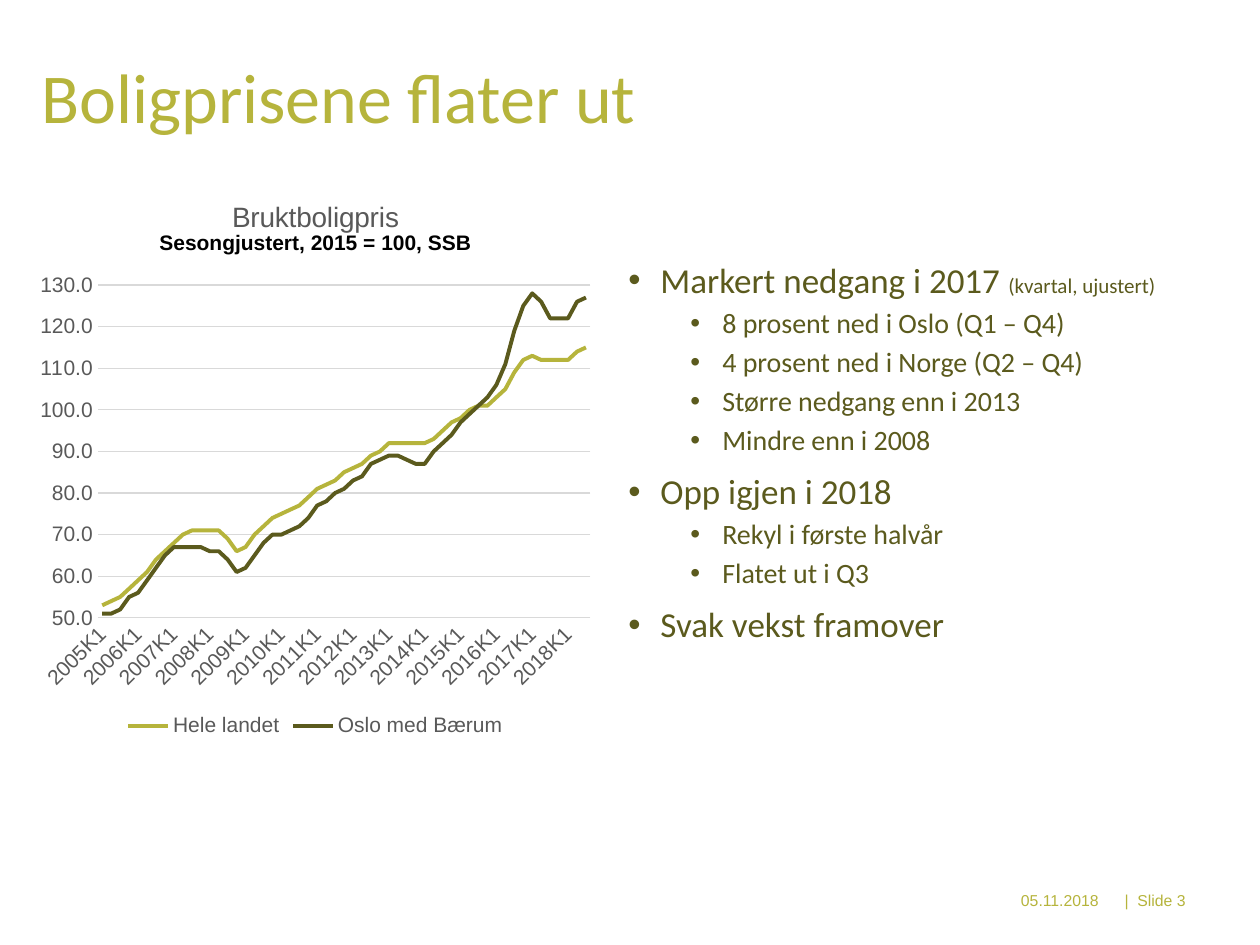
from dataclasses import dataclass

from lxml import etree
from pptx import Presentation
from pptx import util as u
from pptx.chart.data import CategoryChartData
from pptx.dml.color import RGBColor
from pptx.enum import chart as ch
from pptx.enum import text
from pptx.oxml import parse_xml
from pptx.oxml.ns import nsdecls, qn

PX = u.Inches(1) / 126
LIME, OLIVE, GREY, RULE, BLACK = "B6B43C", "5B5A1D", "595959", "D9D9D9", "000000"


@dataclass
class Run:
    text: str
    size: int
    color: str = OLIVE
    font: str = "Calibri"
    bold: bool = False


@dataclass
class Bullet:
    runs: list[Run]
    level: int = 0


@dataclass
class Label:
    run: Run
    box: tuple[int, int, int, int]
    format: dict


@dataclass
class Series:
    name: str
    color: str
    values: list[int]


LABELS = [
    Label(Run("Boligprisene flater ut", 40, LIME), (29, 50, 1218, 102), {"line_spacing": 0.9}),
    Label(Run("05.11.2018", 9, LIME, "Arial"), (965, 885, 146, 31), {"alignment": text.PP_ALIGN.RIGHT}),
    Label(Run("|  Slide 3", 9, LIME, "Arial"), (1084, 885, 114, 31), {"alignment": text.PP_ALIGN.RIGHT}),
]


def point(words: str) -> Bullet:
    return Bullet([Run(words, 20)])


def detail(words: str) -> Bullet:
    return Bullet([Run(words, 16)], 1)


BULLETS = [
    Bullet([Run("Markert nedgang i 2017 ", 20), Run("(kvartal, ujustert)", 12)]),
    detail("8 prosent ned i Oslo (Q1 – Q4)"),
    detail("4 prosent ned i Norge (Q2 – Q4)"),
    detail("Større nedgang enn i 2013"),
    detail("Mindre enn i 2008"),
    point("Opp igjen i 2018"),
    detail("Rekyl i første halvår"),
    detail("Flatet ut i Q3"),
    point("Svak vekst framover"),
]

TITLE = [
    Run("Bruktboligpris", 16, GREY, "Arial"),
    Run("Sesongjustert, 2015 = 100, SSB", 12, BLACK, "Arial", True),
]
SERIES = [
    Series("Hele landet", LIME, [
        53, 54, 55, 57, 59, 61, 64, 66, 68, 70, 71, 71, 71, 71, 69, 66, 67, 70, 72,
        74, 75, 76, 77, 79, 81, 82, 83, 85, 86, 87, 89, 90, 92, 92, 92, 92, 92, 93,
        95, 97, 98, 100, 101, 101, 103, 105, 109, 112, 113, 112, 112, 112, 112, 114, 115]),
    Series("Oslo med Bærum", OLIVE, [
        51, 51, 52, 55, 56, 59, 62, 65, 67, 67, 67, 67, 66, 66, 64, 61, 62, 65, 68,
        70, 70, 71, 72, 74, 77, 78, 80, 81, 83, 84, 87, 88, 89, 89, 88, 87, 87, 90,
        92, 94, 97, 99, 101, 103, 106, 111, 119, 125, 128, 126, 122, 122, 122, 126, 127]),
]
QUARTERS = [f"{2005 + i // 4}K{i % 4 + 1}" for i in range(len(SERIES[0].values))]


def px(n: int) -> u.Emu:
    return u.Emu(round(n * PX))


def rgb(color: str) -> RGBColor:
    return RGBColor.from_string(color)


def set_all(obj, values: dict) -> None:
    for name, value in values.items():
        setattr(obj, name, value)


def set_font(font, size: int, color: str, name: str, bold: bool = False) -> None:
    set_all(font, {"size": u.Pt(size), "name": name, "bold": bold})
    font.color.rgb = rgb(color)


def set_line(line, color: str, width: float) -> None:
    line.color.rgb = rgb(color)
    line.width = u.Pt(width)


def add_run(p, run: Run) -> None:
    r = p.add_run()
    r.text = run.text
    set_font(r.font, run.size, run.color, run.font, run.bold)


def add_box(slide, box: tuple[int, int, int, int], anchor):
    tf = slide.shapes.add_textbox(*map(px, box)).text_frame
    set_all(tf, {"word_wrap": True, "vertical_anchor": anchor})
    return tf


def add_label(slide, label: Label) -> None:
    p = add_box(slide, label.box, text.MSO_ANCHOR.MIDDLE).paragraphs[0]
    set_all(p, label.format)
    add_run(p, label.run)


def add_bullets(slide, bullets: list[Bullet], box: tuple[int, int, int, int]) -> None:
    tf = add_box(slide, box, text.MSO_ANCHOR.TOP)
    for i, bullet in enumerate(bullets):
        p = tf.add_paragraph() if i else tf.paragraphs[0]
        pPr = p._p.get_or_add_pPr()
        pPr.set("marL", str(px(94 if bullet.level else 32)))
        pPr.set("indent", str(px(-32)))
        etree.SubElement(pPr, qn("a:buFont")).set("typeface", "Arial")
        etree.SubElement(pPr, qn("a:buChar")).set("char", "•")
        space = u.Pt(5 if bullet.level else 10) if i else u.Pt(0)
        set_all(p, {"level": bullet.level, "line_spacing": 0.9, "space_before": space})
        for run in bullet.runs:
            add_run(p, run)


def format_axes(chart) -> None:
    cat, val = chart.category_axis, chart.value_axis
    for axis in (cat, val):
        set_all(axis, {"major_tick_mark": ch.XL_TICK_MARK.NONE,
                       "minor_tick_mark": ch.XL_TICK_MARK.NONE})
        set_font(axis.tick_labels.font, 12, GREY, "Arial")
    set_line(cat.format.line, RULE, 0.75)
    cat._element.txPr.find(qn("a:bodyPr")).set("rot", str(-45 * 60000))
    skip = parse_xml(f'<c:tickLblSkip {nsdecls("c")} val="4"/>')
    cat._element.find(qn("c:noMultiLvlLbl")).addprevious(skip)
    set_all(val, {"minimum_scale": 50, "maximum_scale": 130, "major_unit": 10,
                  "has_major_gridlines": True})
    set_all(val.tick_labels, {"number_format": "0.0", "number_format_is_linked": False})
    val.format.line.fill.background()
    set_line(val.major_gridlines.format.line, RULE, 0.75)


def place_plot(chart, **fractions: float) -> None:
    """Fix the inner plot area as fractions of the chart."""
    area = chart._chartSpace.chart.plotArea
    for old in area.findall(qn("c:layout")):
        area.remove(old)
    sizes = "".join(f'<c:{name} val="{value}"/>' for name, value in fractions.items())
    area.insert(0, parse_xml(
        f'<c:layout {nsdecls("c")}><c:manualLayout><c:layoutTarget val="inner"/>'
        f'<c:xMode val="edge"/><c:yMode val="edge"/>{sizes}</c:manualLayout></c:layout>'))


def add_price_chart(slide, box: tuple[int, int, int, int]) -> None:
    data = CategoryChartData(number_format="0.0")
    data.categories = QUARTERS
    for series in SERIES:
        data.add_series(series.name, series.values)
    chart = slide.shapes.add_chart(ch.XL_CHART_TYPE.LINE, *map(px, box), data).chart
    set_font(chart.font, 12, BLACK, "Arial")
    tf = chart.chart_title.text_frame
    for i, run in enumerate(TITLE):
        add_run(tf.add_paragraph() if i else tf.paragraphs[0], run)
    chart.has_legend = True
    set_all(chart.legend, {"position": ch.XL_LEGEND_POSITION.BOTTOM, "include_in_layout": False})
    set_font(chart.legend.font, 12, GREY, "Arial")
    format_axes(chart)
    place_plot(chart, x=0.12, y=0.19, w=0.86, h=0.59)
    chart.plots[0].vary_by_categories = False
    for line, series in zip(chart.plots[0].series, SERIES):
        line.smooth = False
        line.marker.style = ch.XL_MARKER_STYLE.NONE
        set_line(line.format.line, series.color, 2.25)


def main() -> None:
    prs = Presentation()
    set_all(prs, {"slide_width": px(1260), "slide_height": px(945)})
    slide = prs.slides.add_slide(prs.slide_layouts[6])
    for label in LABELS:
        add_label(slide, label)
    add_bullets(slide, BULLETS, (616, 257, 631, 564))
    add_price_chart(slide, (29, 178, 573, 564))
    prs.save("out.pptx")


if __name__ == "__main__":
    main()
